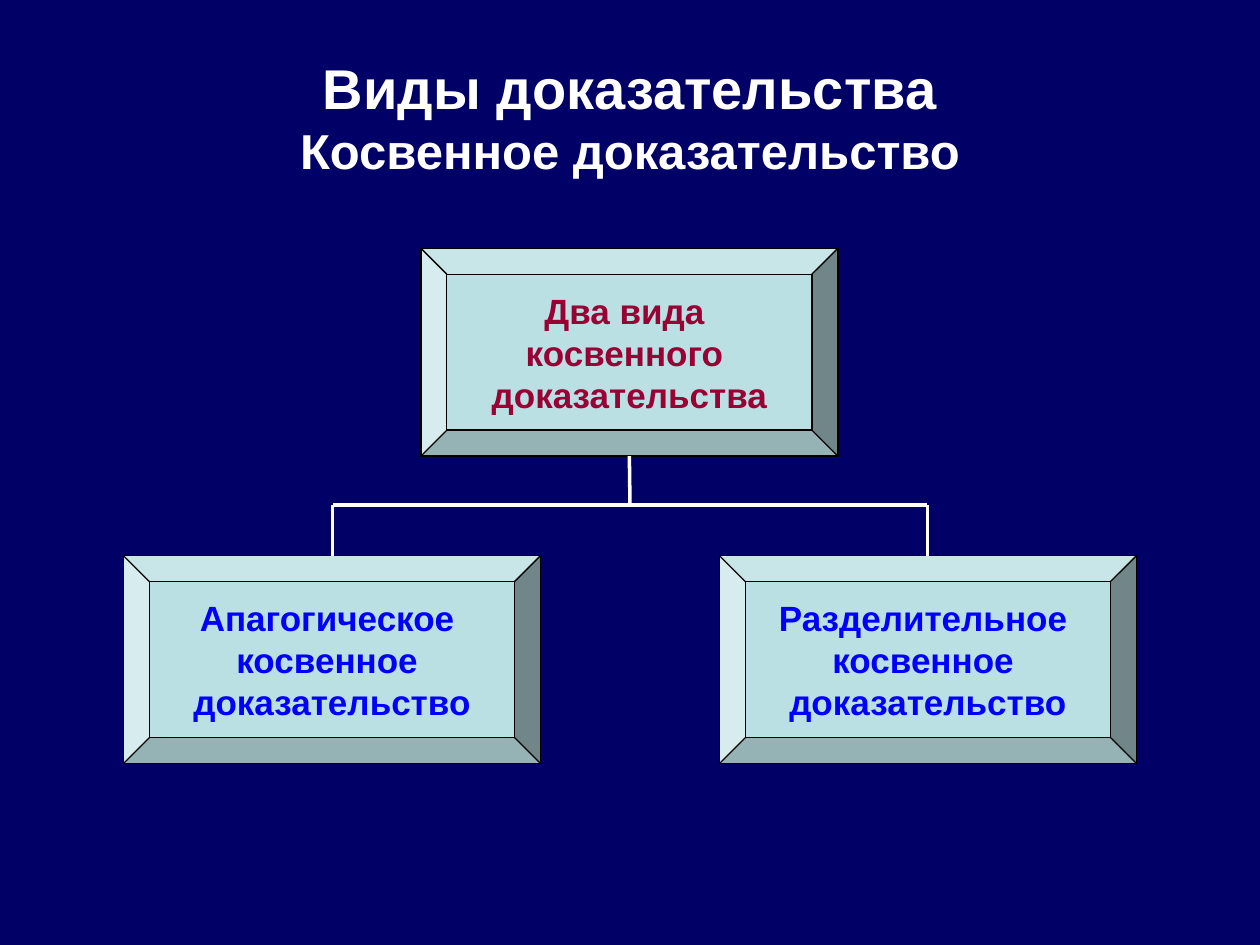
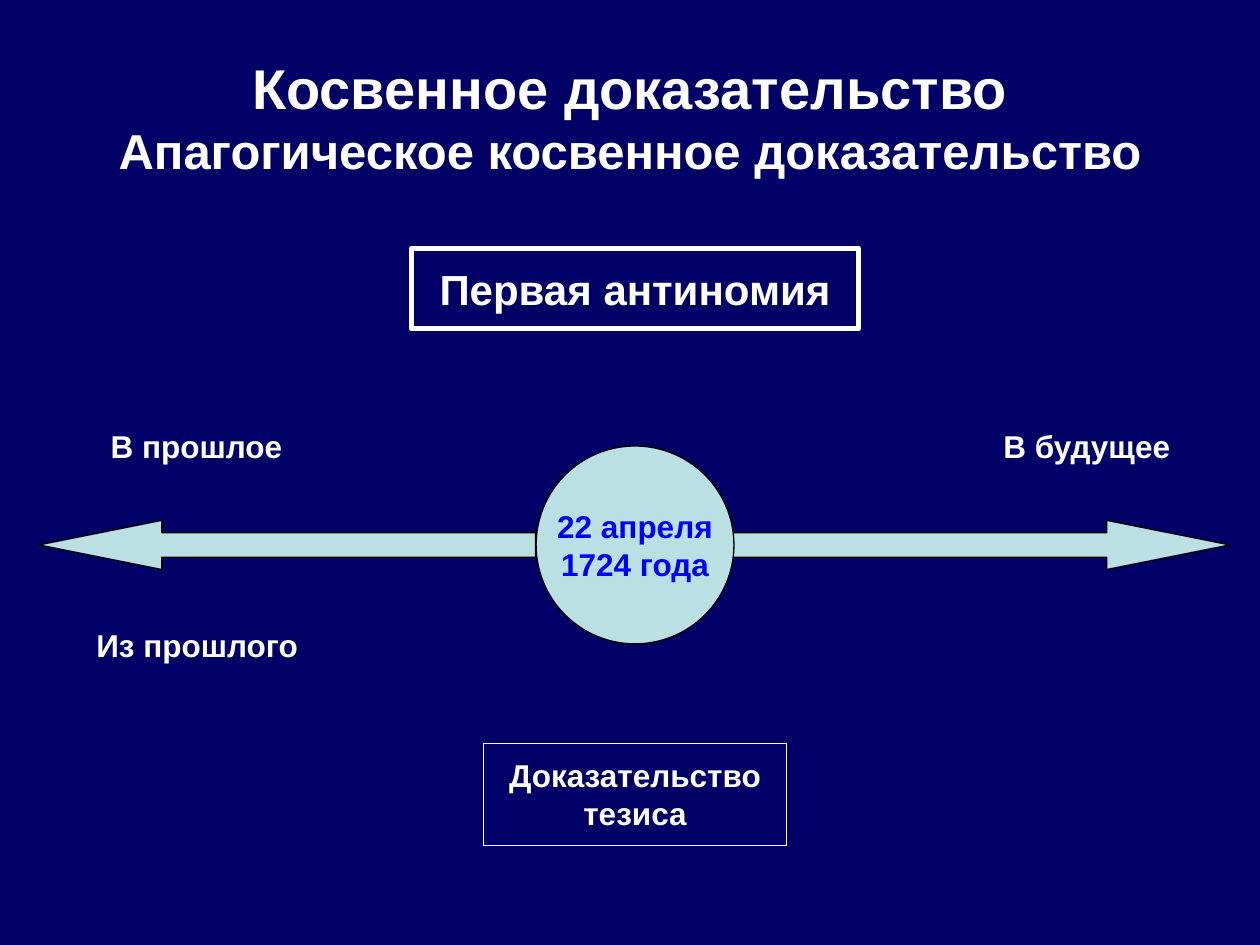
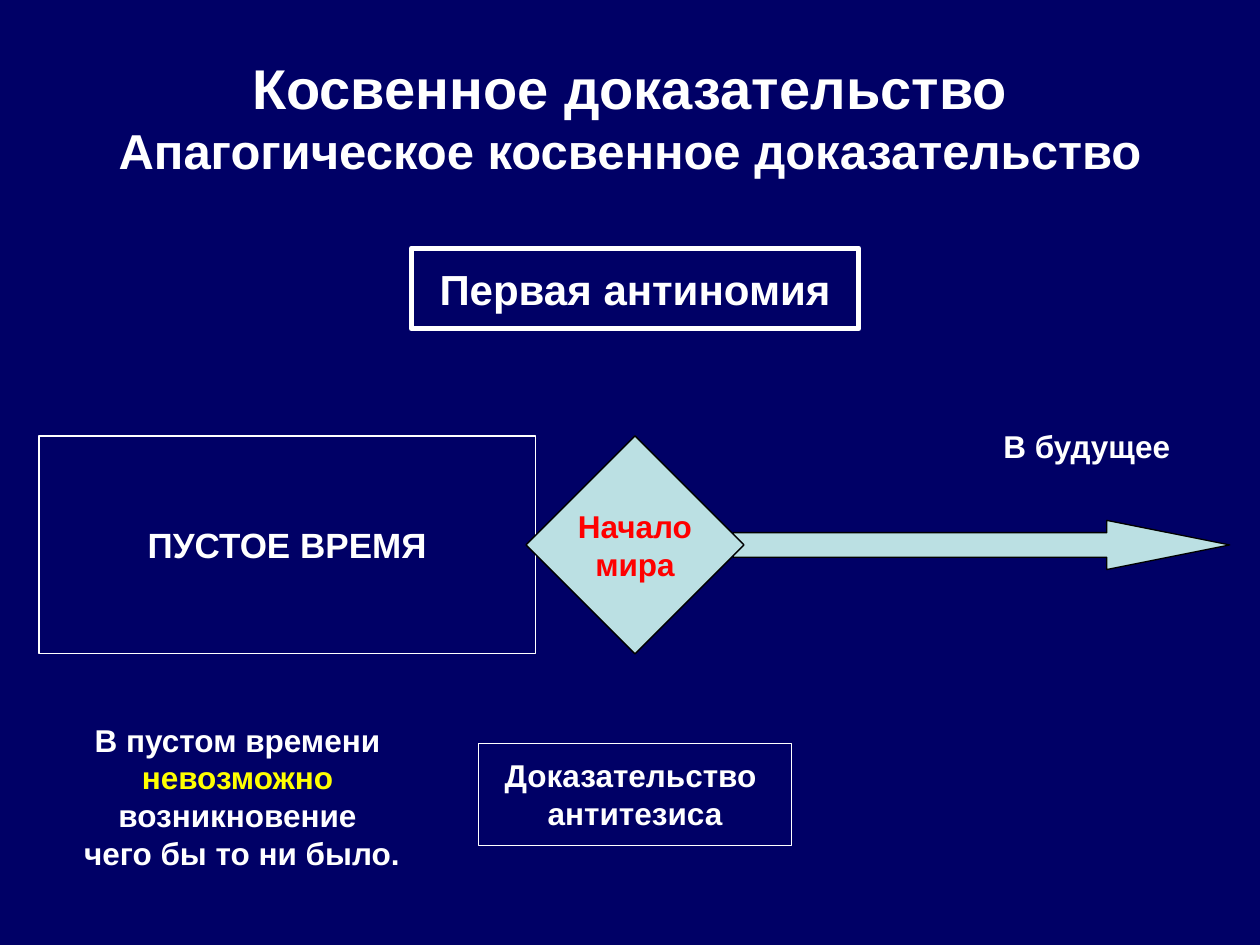
from pptx import Presentation
from pptx import util as u
from pptx.dml.color import RGBColor
from pptx.enum import shapes, text
from pptx.oxml.ns import qn
from lxml import etree

NAVY = RGBColor(0x00, 0x00, 0x66)
WHITE = RGBColor(0xFF, 0xFF, 0xFF)
BLACK = RGBColor(0x00, 0x00, 0x00)
PALE = RGBColor(0xBB, 0xE0, 0xE3)
WINE = RGBColor(0x99, 0x00, 0x33)
BLUE = RGBColor(0x00, 0x00, 0xFF)
RED = RGBColor(0xFF, 0x00, 0x00)
GOLD = RGBColor(0xFF, 0xFF, 0x00)
KIND = shapes.MSO_SHAPE
MID = 5.04
AXIS = 4.325
FRAME = (0.2, 0.1)


def write(frame, lines, anchor=text.MSO_ANCHOR.MIDDLE):
    frame.vertical_anchor = anchor
    para = frame.paragraphs[0]
    para.alignment = text.PP_ALIGN.CENTER
    for row, (words, size, color) in enumerate(lines):
        if row:
            para.add_line_break()
        run = para.add_run()
        run.text = words
        run.font.name = "Arial"
        run.font.size = u.Pt(size)
        run.font.bold = True
        run.font.color.rgb = color


def place(slide, kind, box, fill=None, edge=BLACK, width=0.75):
    shape = slide.shapes.add_shape(kind, *map(u.Inches, box))
    shape.shadow.inherit = False
    if fill is None:
        shape.fill.background()
    else:
        shape.fill.solid()
        shape.fill.fore_color.rgb = fill
    shape.line.color.rgb = edge
    shape.line.width = u.Pt(width)
    return shape


prs = Presentation()
prs.slide_width, prs.slide_height = u.Inches(10), u.Inches(7.5)
back = prs.slide_master.background.fill
back.solid()
back.fore_color.rgb = NAVY

APAGOGE = ("Косвенное доказательство", "Апагогическое косвенное доказательство")
heads = [("Виды доказательства", "Косвенное доказательство"), APAGOGE, APAGOGE]
slides = []
for head, sub in heads:
    slide = prs.slides.add_slide(prs.slide_layouts[5])
    title = slide.shapes.title
    title.left, title.top, title.width, title.height = map(u.Inches, (0.5, 0.3, 9, 1.25))
    title.text_frame.auto_size = text.MSO_AUTO_SIZE.NONE
    write(title.text_frame, [(head, 32, WHITE), (sub, 28, WHITE)])
    slides.append(slide)
tree, thesis, anti = slides

nodes = [
    (3.34, 1.97, WINE, ("Два вида ", "косвенного ", "доказательства")),
    (0.98, 4.41, BLUE, ("Апагогическое ", "косвенное ", "доказательство")),
    (5.71, 4.41, BLUE, ("Разделительное ", "косвенное ", "доказательство")),
]
cards = []
for left, top, color, words in nodes:
    card = place(tree, KIND.BEVEL, (left, top, 3.31, 1.65), PALE)
    card.adjustments[0] = 0.125
    write(card.text_frame, [(word, 20, color) for word in words])
    cards.append(card)

links = [
    (5, 3.62, 5, 4.01),
    (2.64, 4.01, 7.36, 4.01),
    (2.64, 4.01, 2.64, 4.41),
    (7.36, 4.01, 7.36, 4.41),
]
for row, ends in enumerate(links):
    link = tree.shapes.add_connector(shapes.MSO_CONNECTOR.STRAIGHT, *map(u.Inches, ends))
    if row == 0:
        link.begin_connect(cards[0], 2)
    link.line.color.rgb = WHITE
    link.line.width = u.Pt(2)
    etree.SubElement(link._element.spPr, qn("a:effectLst"))

void = place(anti, KIND.RECTANGLE, (0.31, 3.46, 3.94, 1.73), edge=WHITE)
void.text_frame.word_wrap = False
write(void.text_frame, [("ПУСТОЕ ВРЕМЯ", 20, WHITE)])

frames = []
proofs = [
    (thesis, 2.41, ("Доказательство", "тезиса")),
    (anti, 2.48, ("Доказательство ", "антитезиса")),
]
for slide, wide, words in proofs:
    frames.append((slide, wide, 5.9, 0.81, 0.75, text.MSO_ANCHOR.TOP,
                   [(word, 18, WHITE) for word in words]))
    frames.append((slide, 3.55, 1.97, 0.64, 3, text.MSO_ANCHOR.MIDDLE,
                   [("Первая антиномия", 24, WHITE)]))
for slide, wide, top, high, edge, anchor, lines in frames:
    box = place(slide, KIND.RECTANGLE, (MID - wide / 2, top, wide, high), edge=WHITE, width=edge)
    frame = box.text_frame
    frame.margin_left = frame.margin_right = u.Inches(FRAME[0])
    frame.margin_top = frame.margin_bottom = u.Inches(FRAME[1])
    frame.word_wrap = False
    frame.auto_size = text.MSO_AUTO_SIZE.SHAPE_TO_FIT_TEXT
    write(frame, lines, anchor)

arrows = [
    (thesis, KIND.RIGHT_ARROW, 5.82),
    (thesis, KIND.LEFT_ARROW, 0.31),
    (anti, KIND.RIGHT_ARROW, 5.82),
]
for slide, kind, left in arrows:
    arrow = place(slide, kind, (left, 4.13, 3.94, 0.39), PALE)
    arrow.adjustments[0], arrow.adjustments[1] = 0.5, 2.5

cores = [
    (thesis, KIND.OVAL, 1.57, BLUE, ("22 апреля", "1724 года")),
    (anti, KIND.DIAMOND, 1.73, RED, ("Начало", "мира")),
]
for slide, kind, size, color, words in cores:
    core = place(slide, kind, (MID - size / 2, AXIS - size / 2, size, size), PALE)
    core.text_frame.word_wrap = False
    write(core.text_frame, [(word, 18, color) for word in words])

notes = [
    (thesis, (7.79, 3.34, 1.67, 0.4), False, [(" В будущее ", WHITE)]),
    (thesis, (0.71, 3.34, 1.7, 0.4), False, [(" В прошлое ", WHITE)]),
    (thesis, (0.59, 4.92, 1.95, 0.4), False, [(" Из прошлого ", WHITE)]),
    (anti, (7.79, 3.34, 1.67, 0.4), False, [(" В будущее ", WHITE)]),
    (anti, (0.56, 5.67, 2.72, 1.3), True, [
        ("В пустом времени ", WHITE),
        ("невозможно ", GOLD),
        ("возникновение ", WHITE),
        ("чего бы то ни было.", WHITE),
    ]),
]
for slide, box, wrap, lines in notes:
    frame = slide.shapes.add_textbox(*map(u.Inches, box)).text_frame
    frame.word_wrap = wrap
    frame.auto_size = text.MSO_AUTO_SIZE.SHAPE_TO_FIT_TEXT
    write(frame, [(words, 18, color) for words, color in lines], text.MSO_ANCHOR.TOP)

prs.save("out.pptx")
